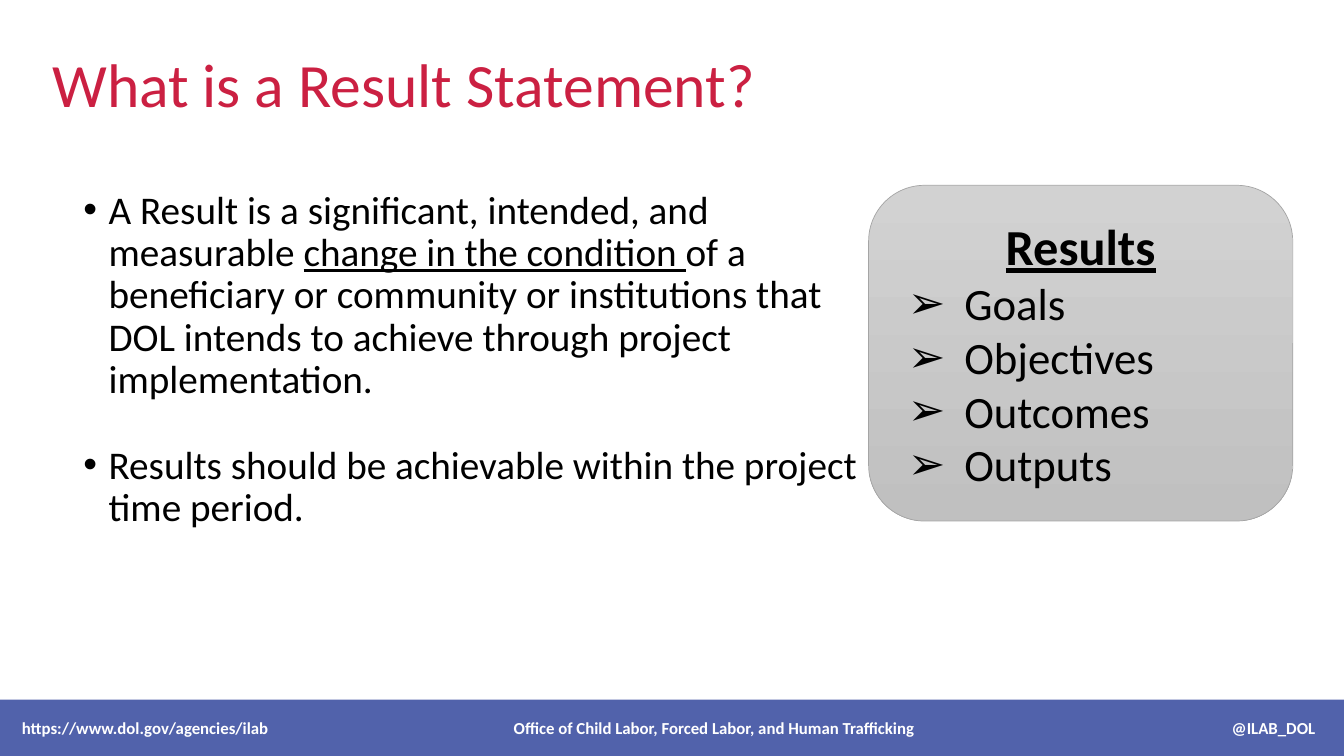
from lxml.etree import SubElement
from pptx import Presentation
from pptx.dml.color import RGBColor
from pptx.enum.shapes import MSO_SHAPE as Shape
from pptx.enum.text import MSO_ANCHOR as Anchor, PP_ALIGN as Align
from pptx.oxml.ns import qn
from pptx.util import Cm, Pt

RED = RGBColor(0xCB, 0x20, 0x42)
BLACK = RGBColor(0x00, 0x00, 0x00)
WHITE = RGBColor(0xFF, 0xFF, 0xFF)
LIGHT_GREY = RGBColor(0xD2, 0xD2, 0xD2)
MID_GREY = RGBColor(0xC0, 0xC0, 0xC0)
LINE_GREY = RGBColor(0xA5, 0xA5, 0xA5)
BLUE = RGBColor(0x3F, 0x51, 0xA2)

FONT = "Calibri"
SLIDE_WIDTH, SLIDE_HEIGHT = Cm(33.87), Cm(19.05)


def set_values(target, values):
    for name, value in values.items():
        setattr(target, name, value)


def add_run(paragraph, text, color, size, **values):
    run = paragraph.add_run()
    run.text = text
    set_values(run.font, {"name": FONT, "size": Pt(size), **values})
    run.font.color.rgb = color


def add_bullet(paragraph, character, left, hanging):
    properties = paragraph._p.get_or_add_pPr()
    properties.set("marL", str(left))
    properties.set("indent", str(-hanging))
    SubElement(properties, qn("a:buFont"), typeface="Arial")
    SubElement(properties, qn("a:buChar"), char=character)


def add_tabs(paragraph, stops):
    tabs = SubElement(paragraph._p.get_or_add_pPr(), qn("a:tabLst"))
    for position, alignment in stops:
        SubElement(tabs, qn("a:tab"), pos=str(position), algn=alignment)


def add_text_frame(slide, box, anchor):
    frame = slide.shapes.add_textbox(*box).text_frame
    set_values(frame, {"word_wrap": True, "vertical_anchor": anchor})
    return frame


def add_title(slide, box):
    paragraph = add_text_frame(slide, box, Anchor.MIDDLE).paragraphs[0]
    paragraph.line_spacing = 0.9
    add_run(paragraph, "What is a Result Statement?", RED, 44)


def add_definition(slide, box):
    frame = add_text_frame(slide, box, Anchor.TOP)
    points = [
        [("A Result is a significant, intended, and measurable ", False),
         ("change in the condition ", True),
         ("of a beneficiary or community or institutions that DOL intends "
          "to achieve through project implementation.", False)],
        [("Results should be achievable within the project time period.",
          False)],
    ]
    for index, point in enumerate(points):
        paragraph = frame.add_paragraph() if index else frame.paragraphs[0]
        add_bullet(paragraph, "•", Cm(0.64), Cm(0.64))
        paragraph.line_spacing = 0.9
        if index:
            paragraph.space_before = Pt(31)
        for text, underlined in point:
            add_run(paragraph, text, BLACK, 28, underline=underlined)


def add_results_card(slide, box):
    card = slide.shapes.add_shape(Shape.ROUNDED_RECTANGLE, *box)
    card.shadow.inherit = False
    card.fill.gradient()
    card.fill.gradient_angle = 270
    for stop, color in zip(card.fill.gradient_stops, (LIGHT_GREY, MID_GREY)):
        stop.color.rgb = color
    card.line.color.rgb = LINE_GREY
    card.line.width = Pt(0.5)

    # Heading and list
    frame = card.text_frame
    set_values(frame, {"word_wrap": True, "vertical_anchor": Anchor.MIDDLE})
    heading = frame.paragraphs[0]
    heading.alignment = Align.CENTER
    add_run(heading, "Results", BLACK, 36, bold=True, underline=True)
    for item in ("Goals", "Objectives", "Outcomes", "Outputs"):
        paragraph = frame.add_paragraph()
        paragraph.alignment = Align.LEFT
        add_bullet(paragraph, "➢", Cm(1.75), Cm(1.42))
        add_run(paragraph, item, BLACK, 32)


def add_footer(slide, box):
    band = slide.shapes.add_shape(Shape.RECTANGLE, *box)
    band.shadow.inherit = False
    band.fill.solid()
    band.fill.fore_color.rgb = BLUE
    band.line.fill.background()

    # Slight transparency
    color = band._element.spPr.find(qn("a:solidFill"))[0]
    SubElement(color, qn("a:alpha"), val="90000")

    # Left, centred and right-aligned labels on one line
    frame = band.text_frame
    set_values(frame, {"word_wrap": True, "vertical_anchor": Anchor.MIDDLE,
                       "margin_left": Cm(0.55)})
    paragraph = frame.paragraphs[0]
    paragraph.alignment = Align.LEFT
    add_tabs(paragraph, [(Cm(17.45), "ctr"), (Cm(32.6), "r")])
    labels = ("https://www.dol.gov/agencies/ilab",
              "Office of Child Labor, Forced Labor, and Human Trafficking",
              "@ILAB_DOL")
    add_run(paragraph, "\t".join(labels), WHITE, 12, bold=True)


def main():
    presentation = Presentation()
    set_values(presentation, {"slide_width": SLIDE_WIDTH,
                              "slide_height": SLIDE_HEIGHT})
    slide = presentation.slides.add_slide(presentation.slide_layouts[6])

    content_top = Cm(4.67)
    footer_height = Cm(1.42)
    add_title(slide, (Cm(1.07), Cm(0.36), Cm(29.21), Cm(3.68)))
    add_definition(slide, (Cm(1.85), content_top, Cm(20.04), Cm(10.49)))
    add_results_card(slide, (Cm(21.89), content_top, Cm(10.69), Cm(8.46)))
    add_footer(slide, (0, SLIDE_HEIGHT - footer_height,
                       SLIDE_WIDTH, footer_height))
    presentation.save("out.pptx")


if __name__ == "__main__":
    main()
